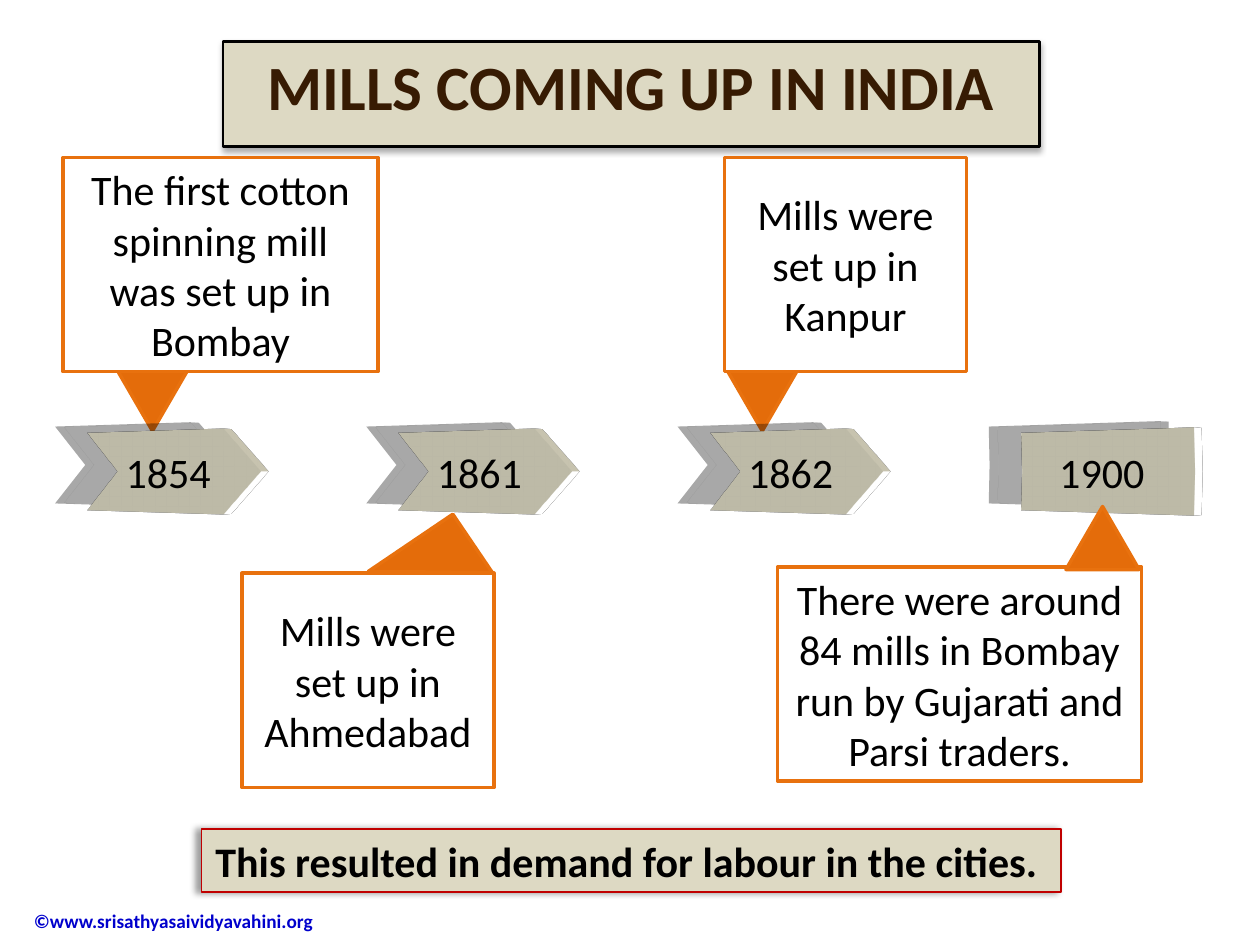
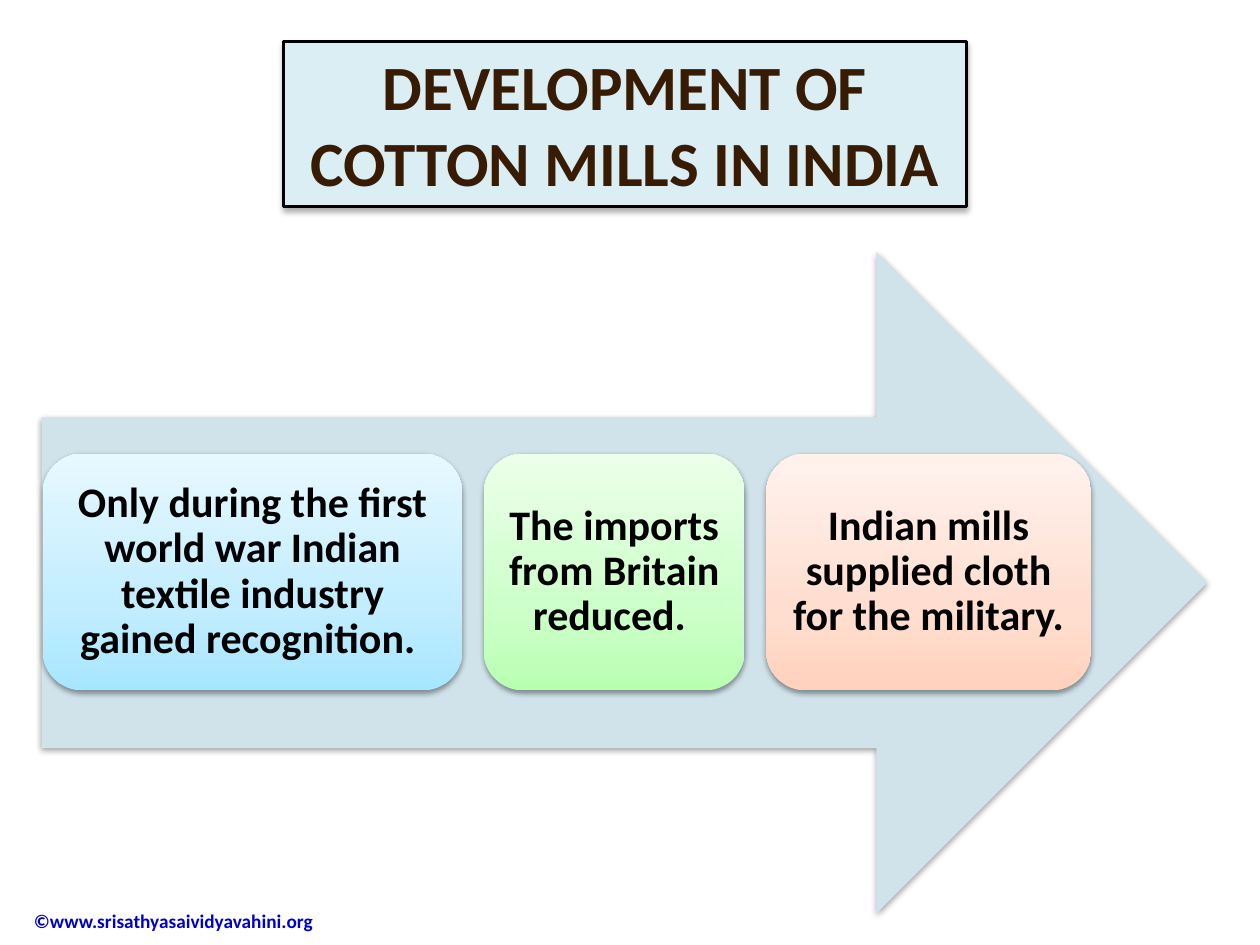
"""Builds two slides on the growth of cotton mills in India."""
from copy import deepcopy

from pptx import Presentation
from pptx.dml.color import RGBColor
from pptx.enum.shapes import MSO_SHAPE as SHAPE
from pptx.enum.text import MSO_ANCHOR as ANCHOR, MSO_AUTO_SIZE as AUTO_SIZE, PP_ALIGN as ALIGN
from pptx.oxml import parse_xml
from pptx.oxml.ns import nsdecls, qn
from pptx.util import Inches, Pt

BLACK = RGBColor(0x00, 0x00, 0x00)
WHITE = RGBColor(0xFF, 0xFF, 0xFF)
BROWN = RGBColor(0x37, 0x1B, 0x03)
TAN = RGBColor(0xDD, 0xD9, 0xC3)
PALE_BLUE = RGBColor(0xDB, 0xEE, 0xF4)
ARROW_BLUE = RGBColor(0xD0, 0xE3, 0xEA)
ORANGE = RGBColor(0xE4, 0x6C, 0x0A)
EDGE_ORANGE = RGBColor(0xE8, 0x71, 0x0E)
RED = RGBColor(0xC0, 0x00, 0x00)
FOOTER_BLUE = RGBColor(0x00, 0x00, 0xCC)
BLUES = [RGBColor.from_string(c) for c in ("A7E6FF", "C1EDFF", "E7F8FF")]
GREENS = [RGBColor.from_string(c) for c in ("B9FFB2", "CDFFC9", "ECFFEA")]
PEACHES = [RGBColor.from_string(c) for c in ("FFD2BD", "FFDED0", "FFF2ED")]

TITLE_SHADOW = (32, 3.5, 2.2, 90)
CARD_SHADOW = (38, 3.1, 1.6, 90)
BANNER_SHADOW = (40, 4, 3, 180)
YEAR_SHADOW = (18, 14.5, 19, 192)
FOOTER = "©www.srisathyasaividyavahini.org"

CAMERA = (
    '<a:scene3d {}><a:camera prst="perspectiveFront" fov="5100000">'
    '<a:rot lat="0" lon="2100000" rev="0"/></a:camera>'
    '<a:lightRig rig="flood" dir="t"><a:rot lat="0" lon="0" rev="13800000"/></a:lightRig>'
    '</a:scene3d>'
)
BEVEL = (
    '<a:sp3d {} extrusionH="107950" prstMaterial="plastic">'
    '<a:bevelT w="82550" h="63500" prst="divot"/><a:bevelB/></a:sp3d>'
)


def write(sp, text, size=24, color=BLACK, bold=False, align=ALIGN.CENTER,
          anchor=ANCHOR.MIDDLE, spacing=None, margin=None, font="Calibri"):
    """Put one formatted paragraph into a shape."""
    tf = sp.text_frame
    tf.word_wrap = True
    tf.vertical_anchor = anchor
    if margin is not None:
        tf.margin_left = tf.margin_right = Inches(margin)
    p = tf.paragraphs[0]
    p.alignment = align
    if spacing:
        p.line_spacing = spacing
    r = p.add_run()
    r.text = text
    r.font.name, r.font.size, r.font.bold = font, Pt(size), bold
    r.font.color.rgb = color


class Deck:
    """Holds the presentation, its shared style and the current slide."""

    def __init__(self):
        """Start an empty 10 by 7.5 inch presentation."""
        self.prs = Presentation()
        self.prs.slide_width, self.prs.slide_height = Inches(10), Inches(7.5)
        self.s = None

    def slide(self, title, box, fill):
        """Add a slide with its framed title and footer."""
        self.s = self.prs.slides.add_slide(self.prs.slide_layouts[5])
        sp = self.s.shapes.title
        sp.left, sp.top, sp.width, sp.height = map(Inches, box)
        self.paint(sp, fill, BLACK, 1.5, TITLE_SHADOW)
        write(sp, title, size=36, color=BROWN, bold=True, anchor=ANCHOR.TOP)
        sp.text_frame.auto_size = AUTO_SIZE.SHAPE_TO_FIT_TEXT
        footer = self.s.shapes.add_textbox(*map(Inches, (0.17, 7.1, 2.6, 0.41)))
        write(footer, FOOTER, size=11, color=FOOTER_BLUE, bold=True, align=ALIGN.LEFT)

    def paint(self, sp, fill, line=None, width=2, shadow=None):
        """Set the fill, outline and shadow of a shape."""
        if isinstance(fill, list):
            self.blend(sp, fill)
        else:
            sp.fill.solid()
            sp.fill.fore_color.rgb = fill
        if line is None:
            sp.line.fill.background()
        else:
            sp.line.color.rgb = line
            sp.line.width = Pt(width)
        effects = sp._element.spPr
        if hasattr(sp, "shadow"):
            sp.shadow.inherit = False
        if shadow:
            alpha, blur, dist, angle = shadow
            effects.find(qn("a:effectLst")).append(parse_xml(
                f'<a:outerShdw {nsdecls("a")} blurRad="{Pt(blur)}" dist="{Pt(dist)}" '
                f'dir="{angle * 60000}" algn="ctr" rotWithShape="0"><a:srgbClr val="000000">'
                f'<a:alpha val="{alpha * 1000}"/></a:srgbClr></a:outerShdw>'))

    def blend(self, sp, colors):
        """Fill a shape with three colours from bottom to top."""
        sp.fill.gradient()
        sp.fill.gradient_angle = 90
        stops = sp._element.spPr.find(".//" + qn("a:gsLst"))
        stops.insert(1, deepcopy(stops[0]))
        for stop, color, position in zip(sp.fill.gradient_stops, colors, (0, 0.35, 1)):
            stop.color.rgb = color
            stop.position = position

    def shape(self, kind, box, fill, line=None, width=2, shadow=None, rotation=0):
        """Add a painted preset shape."""
        sp = self.s.shapes.add_shape(kind, *map(Inches, box))
        sp.rotation = rotation
        self.paint(sp, fill, line, width, shadow)
        return sp

    def pointer(self, box, kind=SHAPE.FLOWCHART_MERGE, rotation=0):
        """Add an orange triangle linking a callout to its year."""
        self.shape(kind, box, ORANGE, EDGE_ORANGE, rotation=rotation)

    def callout(self, text, left, top, width):
        """Add an outlined box that describes an event."""
        sp = self.shape(SHAPE.FLOWCHART_PROCESS, (left, top, width, 1.7), WHITE, EDGE_ORANGE)
        write(sp, text)

    def year(self, text, left, notch=0.5):
        """Add a tilted timeline chevron."""
        sp = self.shape(SHAPE.CHEVRON, (left, 3.42, 1.67, 0.65), TAN, shadow=YEAR_SHADOW)
        sp.adjustments[0] = notch
        for xml in (CAMERA, BEVEL):
            sp._element.spPr.append(parse_xml(xml.format(nsdecls("a"))))
        write(sp, text)

    def banner(self, text, box):
        """Add the concluding statement."""
        sp = self.shape(SHAPE.RECTANGLE, box, TAN, RED, 0.75, BANNER_SHADOW)
        write(sp, text, bold=True, anchor=ANCHOR.TOP)

    def card(self, text, left, width, colors):
        """Add a rounded gradient card."""
        sp = self.shape(SHAPE.ROUNDED_RECTANGLE, (left, 3.6, width, 1.88), colors,
                        shadow=CARD_SHADOW)
        write(sp, text, bold=True, spacing=0.9, margin=0.09)


def build_timeline(deck):
    """Build the timeline of mills."""
    deck.slide("MILLS COMING UP IN INDIA", (1.77, 0.33, 6.48, 0.71), TAN)
    for left in (0.92, 5.76):
        deck.pointer((left, 2.92, 0.58, 0.5))
    for text, left, top, width in (
        ("The first cotton spinning mill was set up in Bombay", 0.5, 1.25, 2.5),
        ("Mills were set up in Kanpur", 5.75, 1.25, 1.92),
        ("Mills were set up in Ahmedabad", 1.92, 4.55, 2),
        ("There were around 84 mills in Bombay run by Gujarati and Parsi traders.",
         6.17, 4.5, 2.89),
    ):
        deck.callout(text, left, top, width)
    for i, (text, notch) in enumerate(
            (("1854", 0.5), ("1861", 0.5), ("1862", 0.5), ("1900", 0.014))):
        deck.year(text, 0.5 + 2.47 * i, notch)
    deck.pointer((8.46, 4.02, 0.58, 0.5), rotation=180)
    deck.pointer((3.01, 4.26, 0.81, 0.56), SHAPE.RIGHT_TRIANGLE, 145.9)
    deck.banner("This resulted in demand for labour in the cities. ", (1.6, 6.58, 6.82, 0.5))


def build_development(deck):
    """Build the arrow of wartime development."""
    deck.slide("DEVELOPMENT OF COTTON MILLS IN INDIA", (2.25, 0.33, 5.42, 1.31), PALE_BLUE)
    deck.shape(SHAPE.RIGHT_ARROW, (0.33, 2, 9.25, 5.25), ARROW_BLUE, shadow=CARD_SHADOW)
    left = 0.34
    for text, width, colors in (
        ("Only during the first world war Indian textile industry gained recognition. ",
         3.33, BLUES),
        ("The imports from Britain reduced. ", 2.07, GREENS),
        ("Indian mills supplied cloth for the military.", 2.58, PEACHES),
    ):
        deck.card(text, left, width, colors)
        left += width + 0.17


def main():
    """Build and save both slides."""
    deck = Deck()
    build_timeline(deck)
    build_development(deck)
    deck.prs.save("out.pptx")


if __name__ == "__main__":
    main()
